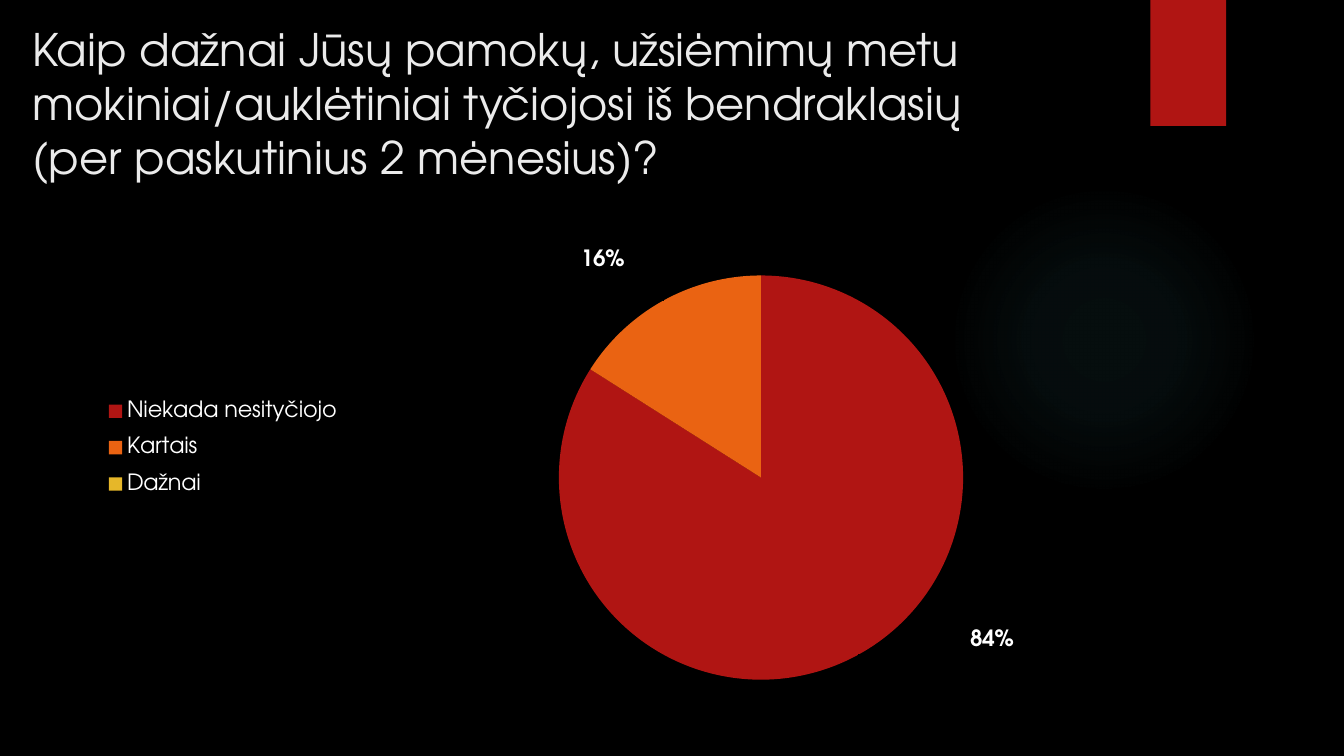
from copy import deepcopy
from dataclasses import dataclass

from pptx import Presentation
from pptx import util as u
from pptx.chart import data
from pptx.dml import color
from pptx.enum import chart as ce, shapes, text
from pptx.oxml import ns, parse_xml


@dataclass(frozen=True)
class Theme:
    font: str = "TeX Gyre Adventor"
    background: str = "000000"
    title: str = "EBEBEB"
    body: str = "FFFFFF"
    glow: str = "50B9C1"
    answers: tuple = ("B01513", "EA6312", "E6B729")
    title_size: int = 32
    chart_size: int = 18
    label_size: int = 16


def rgb(value):
    return color.RGBColor.from_string(value)


def manual_layout(target=None, **fractions):
    inner = f'<c:layoutTarget val="{target}"/>' if target else ""
    if "w" in fractions:
        inner += '<c:xMode val="edge"/><c:yMode val="edge"/>'
    inner += "".join(f'<c:{key} val="{value}"/>' for key, value in fractions.items())
    return parse_xml(f'<c:layout {ns.nsdecls("c")}><c:manualLayout>{inner}</c:manualLayout></c:layout>')


def place(parent, index, layout):
    for old in parent.findall(ns.qn("c:layout")):
        parent.remove(old)
    parent.insert(index, layout)


class SlideBuilder:
    def __init__(self, slide, theme):
        self.slide = slide
        self.theme = theme
        backdrop = slide.background.fill
        backdrop.solid()
        backdrop.fore_color.rgb = rgb(theme.background)

    def style(self, font, size, shade, bold=False):
        font.name = self.theme.font
        font.size = u.Pt(size)
        font.bold = bold
        font.color.rgb = rgb(shade)

    def shape(self, kind, left, top, width, height, shade):
        item = self.slide.shapes.add_shape(kind, *map(u.Pt, (left, top, width, height)))
        item.shadow.inherit = False
        item.line.fill.background()
        item.fill.solid()
        item.fill.fore_color.rgb = rgb(shade)
        return item

    def glow(self, left, top, size, stops):
        halo = self.shape(shapes.MSO_SHAPE.OVAL, left, top, size, size, self.theme.glow)
        marks = "".join(
            f'<a:gs pos="{position * 1000}"><a:srgbClr val="{self.theme.glow}">'
            f'<a:alpha val="{alpha * 1000}"/></a:srgbClr></a:gs>'
            for position, alpha in stops
        )
        gradient = parse_xml(
            f'<a:gradFill {ns.nsdecls("a")}><a:gsLst>{marks}</a:gsLst><a:path path="circle">'
            '<a:fillToRect l="50000" t="50000" r="50000" b="50000"/></a:path></a:gradFill>'
        )
        properties = halo.element.spPr
        properties.replace(properties.find(ns.qn("a:solidFill")), gradient)

    def title(self, left, top, width, height, lines):
        heading = self.slide.shapes.title
        heading.left, heading.top, heading.width, heading.height = map(u.Pt, (left, top, width, height))
        frame = heading.text_frame
        frame.word_wrap = True
        frame.auto_size = text.MSO_AUTO_SIZE.NONE
        frame.vertical_anchor = text.MSO_ANCHOR.TOP
        question = frame.paragraphs[0]
        question.alignment = text.PP_ALIGN.LEFT
        question.line_spacing = 1.0
        question.space_before = u.Pt(0)
        for number, line in enumerate(lines):
            if number:
                question.add_line_break()
            run = question.add_run()
            run.text = line
            self.style(run.font, self.theme.title_size, self.theme.title)

    def pie(self, left, top, width, height, answers, label_shifts):
        theme = self.theme
        counts = data.CategoryChartData(number_format="0")
        counts.categories = list(answers)
        counts.add_series("Series 1", list(answers.values()))
        pie = self.slide.shapes.add_chart(
            ce.XL_CHART_TYPE.PIE, *map(u.Pt, (left, top, width, height)), counts
        ).chart
        pie.has_title = False
        self.style(pie.font, theme.chart_size, theme.body)
        pie.plots[0].vary_by_categories = True
        responses = pie.plots[0].series[0]
        for number, shade in enumerate(theme.answers):
            slice_format = responses.points[number].format
            slice_format.fill.solid()
            slice_format.fill.fore_color.rgb = rgb(shade)
            slice_format.line.fill.background()

        pie.has_legend = True
        legend = pie.legend
        legend.position = ce.XL_LEGEND_POSITION.RIGHT
        legend.include_in_layout = False
        self.style(legend.font, theme.label_size, theme.body)
        place(legend._element, 1, manual_layout(x=0.02, y=0.34, w=0.22, h=0.25))
        plot_area = pie._chartSpace.find(".//" + ns.qn("c:plotArea"))
        place(plot_area, 0, manual_layout("inner", x=0.15, y=0.12, w=0.85, h=0.81))
        self.percent_labels(responses, label_shifts)

    def percent_labels(self, responses, shifts):
        labels = responses.data_labels
        labels.show_value = False
        labels.show_percentage = True
        labels.number_format = "0%"
        labels.number_format_is_linked = False
        labels.position = ce.XL_LABEL_POSITION.OUTSIDE_END
        self.style(labels.font, self.theme.label_size, self.theme.body, bold=True)
        holder = labels._element
        shared = [part for part in holder if part.tag != ns.qn("c:showLeaderLines")]
        for number, shift in enumerate(shifts):
            label = parse_xml(f'<c:dLbl {ns.nsdecls("c")}><c:idx val="{number}"/></c:dLbl>')
            if shift:
                label.append(manual_layout(x=shift[0], y=shift[1]))
                label.extend(deepcopy(part) for part in shared)
            else:
                label.append(parse_xml(f'<c:delete {ns.nsdecls("c")} val="1"/>'))
            holder.insert(number, label)


def main():
    deck = Presentation()
    deck.slide_width, deck.slide_height = u.Pt(960), u.Pt(540)
    theme = Theme()
    survey = SlideBuilder(deck.slides.add_slide(deck.slide_layouts[5]), theme)
    survey.glow(677.5, 131.75, 221.75, [(0, 7), (36, 6), (69, 0)])
    survey.shape(shapes.MSO_SHAPE.RECTANGLE, 821.75, 0, 54, 90, theme.answers[0])
    survey.title(16, 12, 829.5, 120, [
        "Kaip dažnai Jūsų pamokų, užsiėmimų metu mokiniai/auklėtiniai tyčiojosi iš bendraklasių",
        "(per paskutinius 2 mėnesius)?",
    ])
    survey.pie(
        46.8, 154, 864, 356.5,
        {"Niekada nesityčiojo": 84, "Kartais": 16, "Dažnai": 0},
        [(0.09, -0.06), (-0.03, -0.05), None],
    )
    deck.save("out.pptx")


if __name__ == "__main__":
    main()
